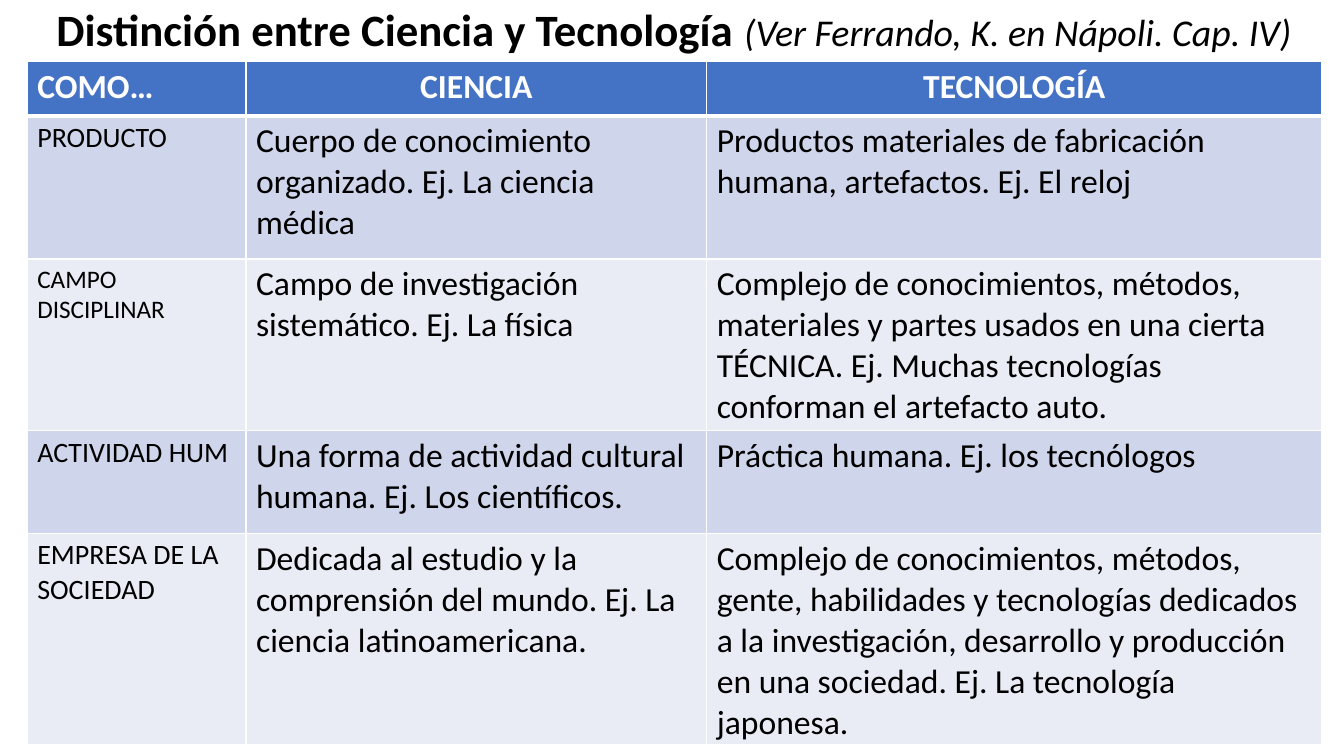
from lxml import etree
from pptx import Presentation
from pptx.dml.color import RGBColor
from pptx.enum.text import MSO_ANCHOR as Anchor, PP_ALIGN as Align
from pptx.oxml.ns import qn
from pptx.util import Inches, Pt

FONT = "Calibri"
BLACK, WHITE, BLUE = "000000", "FFFFFF", "4472C4"
BANDS = ["CFD5EA", "E9EBF5"]
COLUMN_WIDTHS = [2.17, 4.57, 6.1]
ROW_HEIGHTS = [0.54, 1.42, 1.45, 1.02, 1.84]
HEADINGS = ["COMO…", "CIENCIA", "TECNOLOGÍA"]

# Label, label size, science, technology
ASPECTS = [
    ("PRODUCTO", 20,
     "Cuerpo de conocimiento organizado. Ej. La ciencia médica",
     "Productos materiales de fabricación humana, artefactos. Ej. El reloj"),
    ("CAMPO DISCIPLINAR", 18,
     "Campo de investigación sistemático. Ej. La física",
     "Complejo de conocimientos, métodos, materiales y partes usados en una "
     "cierta TÉCNICA. Ej. Muchas tecnologías conforman el artefacto auto."),
    ("ACTIVIDAD HUM", 20,
     "Una forma de actividad cultural humana. Ej. Los científicos.",
     "Práctica humana. Ej. los tecnólogos"),
    ("EMPRESA DE LA SOCIEDAD", 20,
     "Dedicada al estudio y la comprensión del mundo. Ej. La ciencia "
     "latinoamericana.",
     "Complejo de conocimientos, métodos, gente, habilidades y tecnologías "
     "dedicados a la investigación, desarrollo y producción en una sociedad. "
     "Ej. La tecnología japonesa."),
]


def color(hex_text):
    return RGBColor.from_string(hex_text)


def add_span(para, text, size, hex_text=BLACK, bold=False, italic=False):
    span = para.add_run()
    span.text = text
    font = span.font
    font.name, font.size = FONT, Pt(size)
    font.bold, font.italic = bold, italic
    font.color.rgb = color(hex_text)


def set_borders(cell, hex_text, widths):
    """Draw the left, right, top and bottom borders, ahead of the fill."""
    properties = cell._tc.get_or_add_tcPr()
    for index, (tag, width) in enumerate(zip(("lnL", "lnR", "lnT", "lnB"), widths)):
        line = etree.Element(qn(f"a:{tag}"), w=str(Pt(width)))
        fill = etree.SubElement(line, qn("a:solidFill"))
        etree.SubElement(fill, qn("a:srgbClr"), val=hex_text)
        properties.insert(index, line)


def add_title(page, left, top, width, height):
    box = page.shapes.add_textbox(*map(Inches, (left, top, width, height)))
    frame = box.text_frame
    frame.word_wrap = True
    frame.vertical_anchor = Anchor.BOTTOM
    para = frame.paragraphs[0]
    para.alignment = Align.CENTER
    para.line_spacing = 0.9
    add_span(para, "Distinción entre Ciencia y Tecnología ", 32, bold=True)
    add_span(para, "(Ver Ferrando, K. en Nápoli. Cap. IV)", 27, italic=True)


def fill_cell(cell, text, size, fill, text_color=BLACK, bold=False,
              align=Align.LEFT, borders=(1, 1, 1, 1)):
    cell.fill.solid()
    cell.fill.fore_color.rgb = color(fill)
    set_borders(cell, WHITE, borders)
    para = cell.text_frame.paragraphs[0]
    para.alignment = align
    add_span(para, text, size, text_color, bold)


def add_comparison(page, left, top):
    box = page.shapes.add_table(
        len(ROW_HEIGHTS), len(COLUMN_WIDTHS), Inches(left), Inches(top),
        Inches(sum(COLUMN_WIDTHS)), Inches(sum(ROW_HEIGHTS)))
    table = box.table
    for column, width in zip(table.columns, COLUMN_WIDTHS):
        column.width = Inches(width)
    for row, height in zip(table.rows, ROW_HEIGHTS):
        row.height = Inches(height)

    # Heading row
    for index, heading in enumerate(HEADINGS):
        fill_cell(table.cell(0, index), heading, 24, BLUE, WHITE, True,
                  Align.CENTER if index else Align.LEFT, (1, 1, 1, 3))

    # Banded rows
    for row, (label, label_size, science, technology) in enumerate(ASPECTS, 1):
        sizes = (label_size, 24, 24)
        borders = (1, 1, 3 if row == 1 else 1, 1)
        for index, text in enumerate((label, science, technology)):
            fill_cell(table.cell(row, index), text, sizes[index],
                      BANDS[(row - 1) % 2], borders=borders)


def main():
    deck = Presentation()
    deck.slide_width, deck.slide_height = Inches(13.33), Inches(7.5)
    page = deck.slides.add_slide(deck.slide_layouts[6])
    add_title(page, 0.27, -0.01, 12.83, 0.62)
    add_comparison(page, 0.27, 0.61)
    deck.save("out.pptx")


if __name__ == "__main__":
    main()
